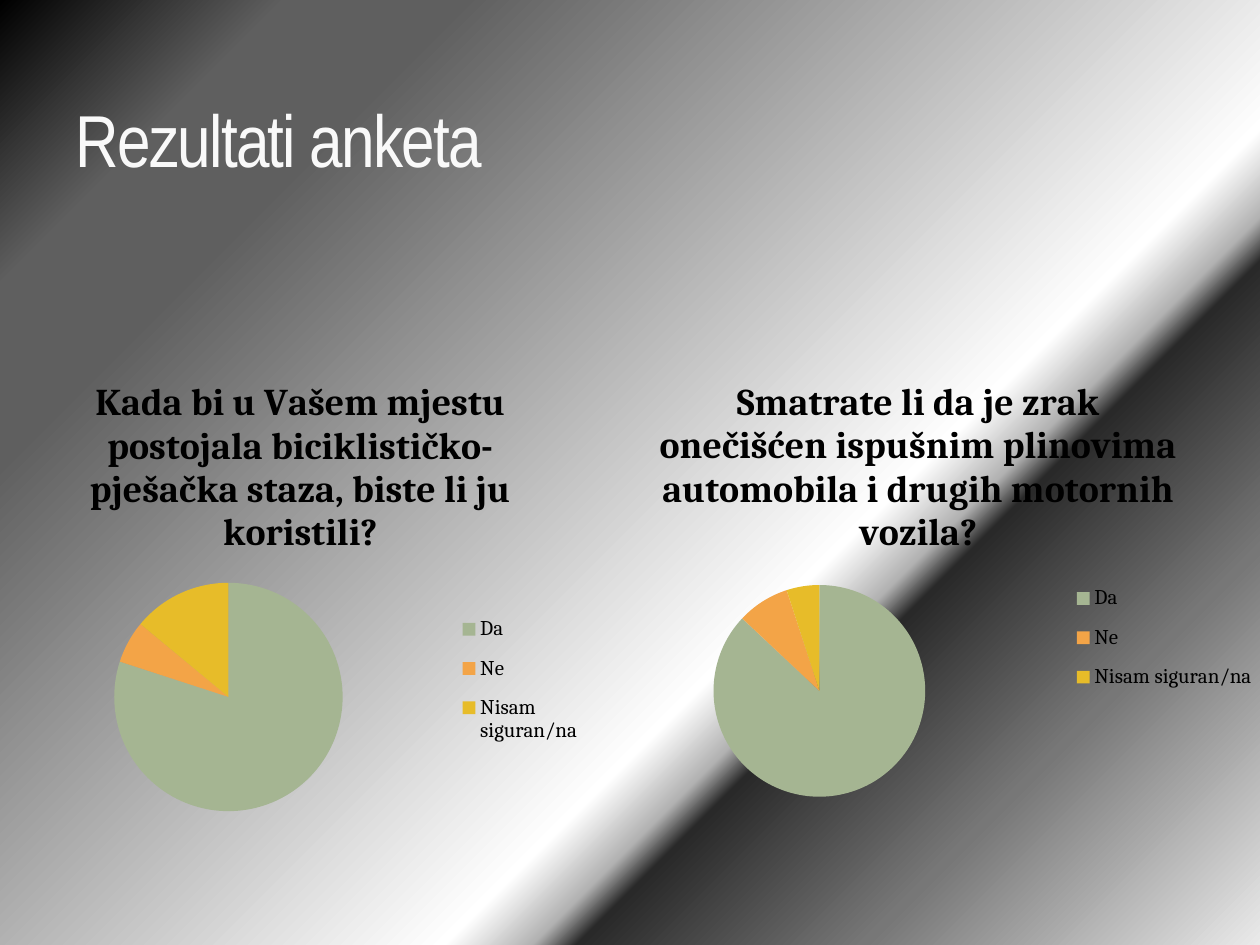
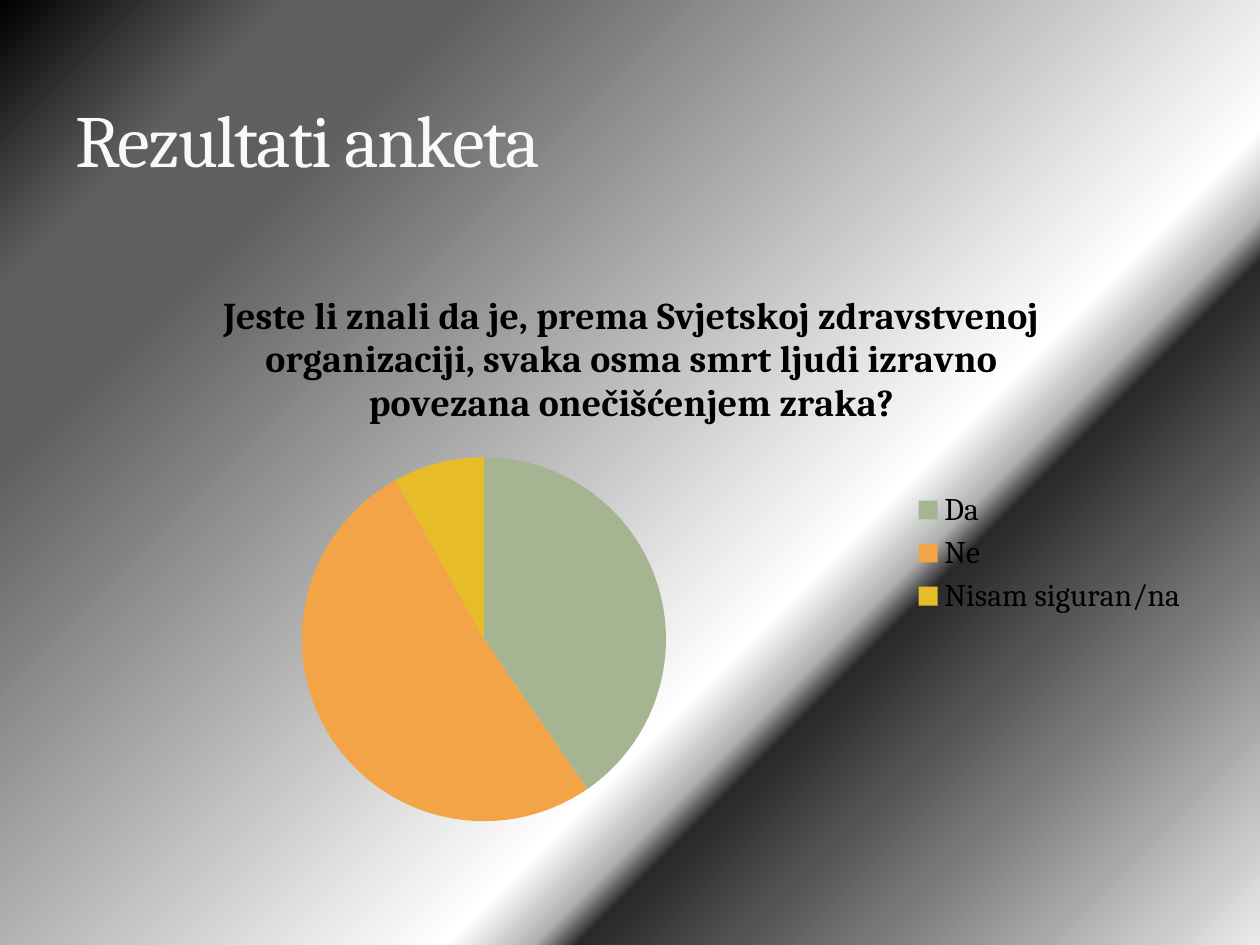
"""Build two slides of survey results shown as pie charts."""
import lxml.etree
import pptx
import pptx.chart.data
import pptx.dml.color
import pptx.enum.chart
import pptx.enum.text
import pptx.oxml
import pptx.oxml.ns
import pptx.util
from pptx.util import Cm

SERIF = "Cambria"
NARROW = "Arial Narrow"
BLACK = "000000"
TITLE_COLOR = "F9F9F9"
OUTLINE_COLOR = "3C4422"
ANSWER_COLORS = {"Da": "A5B592", "Ne": "F3A447", "Nisam siguran/na": "E7BC29"}
BACKDROP = [(0, BLACK), (13, "5F5F5F"), (21, "5F5F5F"), (63, "FFFFFF"),
            (67, "B2B2B2"), (69, "292929"), (82, "777777"), (100, "EAEAEA")]


def rgb(value):
    return pptx.dml.color.RGBColor.from_string(value)


def add_element(parent, tag, **attributes):
    return lxml.etree.SubElement(parent, pptx.oxml.ns.qn(tag), attributes)


def format_font(font, name=SERIF, size=18, color=BLACK, bold=False):
    font.name = name
    font.size = pptx.util.Pt(size)
    font.bold = bold
    font.color.rgb = rgb(color)


def write_text(frame, text, align=None, **style):
    para = frame.paragraphs[0]
    para.alignment = align
    span = para.add_run()
    span.text = text
    format_font(span.font, **style)
    return span


def paint_backdrop(master):
    master.background.fill.gradient()
    gradient = master.element.xpath("./p:cSld/p:bg//a:gradFill")[0]
    stops = gradient.find(pptx.oxml.ns.qn("a:gsLst"))
    stops.clear()
    for percent, color in BACKDROP:
        stop = add_element(stops, "a:gs", pos=str(percent * 1000))
        add_element(stop, "a:srgbClr", val=color)
    gradient.find(pptx.oxml.ns.qn("a:lin")).set("ang", str(45 * 60000))


def outline_text(span, color, width, opacity):
    properties = span.font._element
    line = pptx.oxml.parse_xml(
        f'<a:ln {pptx.oxml.ns.nsdecls("a")} w="{pptx.util.Pt(width)}"><a:solidFill>'
        f'<a:srgbClr val="{color}"><a:alpha val="{opacity * 1000}"/></a:srgbClr>'
        '</a:solidFill></a:ln>')
    properties.insert(0, line)


def add_titled_slide(deck, text, font):
    slide = deck.slides.add_slide(deck.slide_layouts[5])
    title = slide.shapes.title
    title.left, title.top = Cm(1.27), Cm(0.43)
    title.width, title.height = Cm(22.86), Cm(3.38)
    frame = title.text_frame
    frame.auto_size = pptx.enum.text.MSO_AUTO_SIZE.NONE
    frame.vertical_anchor = pptx.enum.text.MSO_ANCHOR.BOTTOM
    span = write_text(frame, text, align=pptx.enum.text.PP_ALIGN.LEFT,
                      name=font, size=42, color=TITLE_COLOR)
    span.font._element.set("spc", "-100")
    outline_text(span, OUTLINE_COLOR, 0.25, 25)
    return slide


def make_layout(area, inner=False):
    layout = pptx.oxml.parse_xml(f'<c:layout {pptx.oxml.ns.nsdecls("c")}/>')
    manual = add_element(layout, "c:manualLayout")
    if inner:
        add_element(manual, "c:layoutTarget", val="inner")
    for mode in ("xMode", "yMode"):
        add_element(manual, f"c:{mode}", val="edge")
    for side, fraction in zip("xywh", area):
        add_element(manual, f"c:{side}", val=str(fraction))
    return layout


def drop_layout(element):
    for layout in element.findall(pptx.oxml.ns.qn("c:layout")):
        element.remove(layout)


def place_plot(chart, area):
    plot_area = chart.element.xpath("./c:chart/c:plotArea")[0]
    drop_layout(plot_area)
    plot_area.insert(0, make_layout(area, inner=True))


def place_legend(chart, area):
    legend = chart.element.xpath("./c:chart/c:legend")[0]
    drop_layout(legend)
    legend.find(pptx.oxml.ns.qn("c:overlay")).addprevious(make_layout(area))


def add_pie(slide, question, shares, place, plot, legend=None, legend_size=12):
    data = pptx.chart.data.CategoryChartData()
    data.categories = list(ANSWER_COLORS)
    data.add_series(question, shares)
    chart = slide.shapes.add_chart(
        pptx.enum.chart.XL_CHART_TYPE.PIE, *map(Cm, place), data).chart
    format_font(chart.font)
    chart.has_title = True
    write_text(chart.chart_title.text_frame, question, size=21.6, bold=True)
    chart.has_legend = True
    chart.legend.position = pptx.enum.chart.XL_LEGEND_POSITION.RIGHT
    chart.legend.include_in_layout = False
    format_font(chart.legend.font, size=legend_size)
    pie = chart.plots[0]
    pie.vary_by_categories = True
    for index, color in enumerate(ANSWER_COLORS.values()):
        fill = pie.series[0].points[index].format.fill
        fill.solid()
        fill.fore_color.rgb = rgb(color)
    place_plot(chart, plot)
    if legend:
        place_legend(chart, legend)


def main():
    deck = pptx.Presentation()
    deck.slide_width, deck.slide_height = Cm(25.4), Cm(19.05)
    paint_backdrop(deck.slide_master)

    habits = add_titled_slide(deck, "Rezultati anketa", NARROW)
    add_pie(habits, "Kada bi u Vašem mjestu postojala biciklističko-pješačka staza, "
            "biste li ju koristili?", (80, 6, 14),
            place=(0, 7.14, 12.12, 9.6), plot=(0.19, 0.48, 0.38, 0.48),
            legend=(0.74, 0.52, 0.25, 0.33))
    add_pie(habits, "Smatrate li da je zrak onečišćen ispušnim plinovima automobila "
            "i drugih motornih vozila?", (87, 8, 5),
            place=(11.63, 7.14, 13.77, 9.3), plot=(0.2, 0.5, 0.31, 0.46),
            legend=(0.72, 0.47, 0.28, 0.29))

    awareness = add_titled_slide(deck, "Rezultati anketa", SERIF)
    add_pie(awareness, "Jeste li znali da je, prema Svjetskoj zdravstvenoj organizaciji, "
            "svaka osma smrt ljudi izravno povezana onečišćenjem zraka?", (40, 51, 8),
            place=(1.27, 5.36, 22.94, 11.58), plot=(0.21, 0.33, 0.32, 0.64),
            legend_size=18)

    deck.save("out.pptx")


if __name__ == "__main__":
    main()
